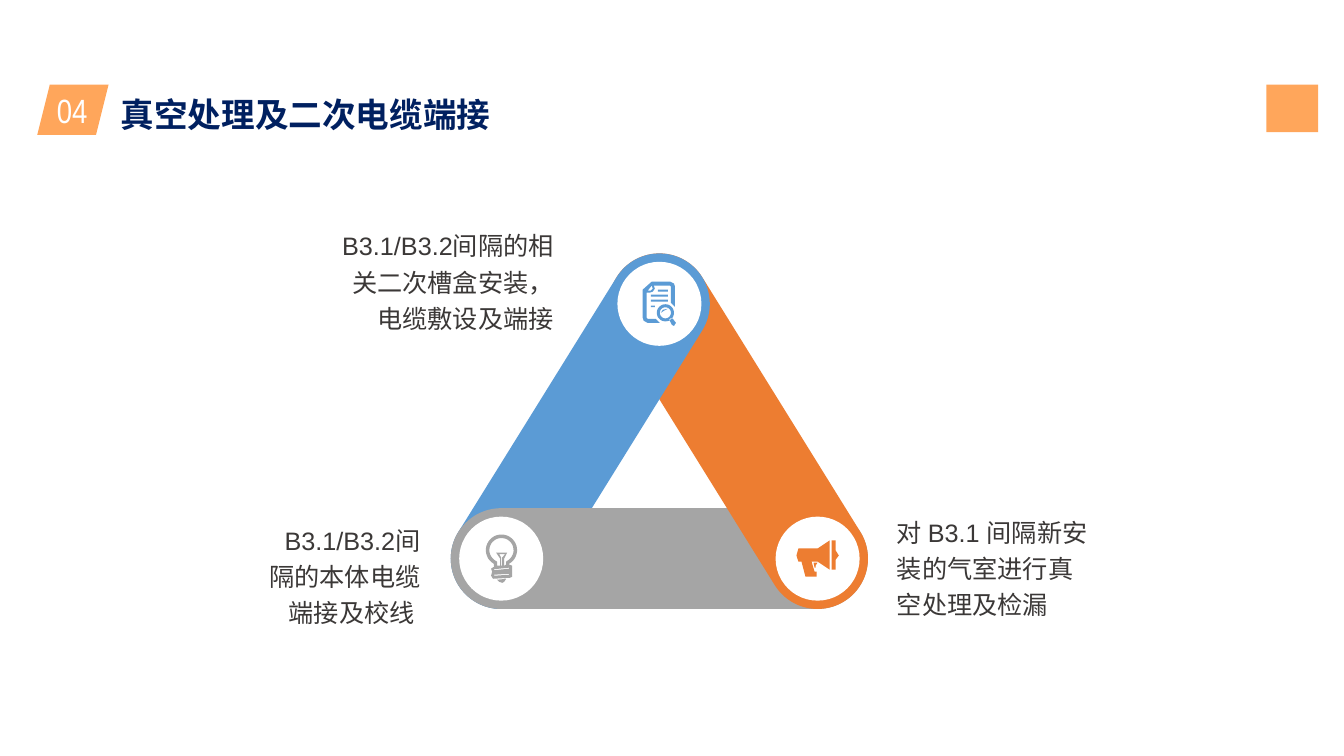
"""Build a slide with a header and a triangle of three linked work steps."""
import math

import pptx
import pptx.dml.color
import pptx.enum.shapes
import pptx.enum.text
import pptx.util
from lxml import etree

Pt = pptx.util.Pt
RGBColor = pptx.dml.color.RGBColor
Shape = pptx.enum.shapes.MSO_SHAPE
Align = pptx.enum.text.PP_ALIGN

PEACH = RGBColor(0xFF, 0xA6, 0x5B)
NAVY = RGBColor(0x00, 0x20, 0x60)
WHITE = RGBColor(0xFF, 0xFF, 0xFF)
BLUE = RGBColor(0x5B, 0x9B, 0xD5)
ORANGE = RGBColor(0xED, 0x7D, 0x31)
GREY = RGBColor(0xA5, 0xA5, 0xA5)
CHARCOAL = RGBColor(0x3B, 0x38, 0x37)

CHINESE = "Noto Sans CJK SC"
DRAWING = "{http://schemas.openxmlformats.org/drawingml/2006/main}"
ICON_UNIT = 0.72
ICON_STEPS = 10
BAR = 72
DISC = 60


def arc(x, y, radius, start=0, end=360):
    """Return points along a circular arc, with angles in degrees."""
    steps = 32
    angles = [math.radians(start + (end - start) * i / steps) for i in range(steps + 1)]
    return [(x + radius * math.cos(a), y + radius * math.sin(a)) for a in angles]


def stripe(x, y, width, height):
    """Return the corners of a rectangle."""
    return [(x, y), (x + width, y), (x + width, y + height), (x, y + height)]


DOCUMENT = (33, 44, [
    [(9, 0), (27, 0), (31, 2), (32, 5), (32, 25), (28, 21), (28, 5), (27, 4), (11, 4),
     (12, 7), (10, 10), (7, 11), (4, 11), (4, 36), (5, 37), (13, 37), (17, 41), (5, 41),
     (1, 39), (0, 36), (0, 8)],
    [(9, 4), (5, 9), (8, 9), (10, 7)],
    stripe(8, 24, 4, 1.5), stripe(8, 18, 17, 2), stripe(8, 13, 17, 2), stripe(15, 8, 10, 2),
    arc(22.5, 31, 8.5), arc(22.5, 31, 5.5),
    [(18, 31), (20, 28), (25, 27), (21, 29)],
    [(26, 38), (27, 39), (29, 43), (31, 44), (33, 41), (30, 37), (28, 36)],
])
BULB = (30, 48, [
    arc(15.3, 15.6, 15.5, 120, 420) + [
        (23, 30), (26, 31), (26, 42), (24, 43), (7, 44), (5, 41), (6, 37), (5, 34), (8, 32)],
    arc(15.3, 15.6, 12, 120, 420) + [
        (20, 27), (20, 30), (18, 31), (18, 24), (21, 18), (10, 18), (14, 24), (14, 31),
        (11, 31), (11, 27)],
    [(13, 19.5), (19, 19.5), (16, 23), (16, 31), (15, 31), (15, 23)],
    [(8, 40), (23, 39), (23, 40), (8, 41)],
    [(8, 34.5), (23, 33), (23, 34), (8, 35.5)],
    [(11, 45), (20, 44), (18, 47), (16, 48), (13, 47)],
])
MEGAPHONE = (42, 36, [
    [(2, 8), (21, 8), (33, 0), (33, 29), (21, 21), (15, 21), (18, 31), (20, 31), (20, 36),
     (9, 36), (5, 21), (2, 21), (0, 15)],
    [(35, 0), (39, 0), (39, 10), (42, 15), (39, 19), (39, 29), (35, 29)],
    [(21, 22), (17, 22), (18, 27), (19, 27), (19, 25)],
])


def paint(shape, colour):
    """Give a shape a plain fill without line or shadow."""
    shape.shadow.inherit = False
    shape.fill.solid()
    shape.fill.fore_color.rgb = colour
    shape.line.fill.background()


def add_block(page, kind, box, colour):
    """Add a preset shape in the given box."""
    block = page.shapes.add_shape(kind, *map(Pt, box))
    paint(block, colour)
    return block


def add_words(page, box, spans, size, colour, align=Align.LEFT, spacing=1, bold=None):
    """Add a wrapping text box from pairs of text and font."""
    frame = page.shapes.add_textbox(*map(Pt, box)).text_frame
    frame.word_wrap = True
    para = frame.paragraphs[0]
    para.alignment = align
    para.line_spacing = float(spacing)
    for text, font in spans:
        span = para.add_run()
        span.text = text
        span.font.name = font
        span.font.size = Pt(size)
        span.font.bold = bold
        span.font.color.rgb = colour
        properties = span._r.get_or_add_rPr()
        properties.set("lang", "zh-CN")
        etree.SubElement(properties, DRAWING + "ea").set("typeface", CHINESE)


def add_bar(page, start, end, colour):
    """Add a round-ended bar whose end caps centre on two points."""
    across, down = end[0] - start[0], end[1] - start[1]
    length = math.hypot(across, down) + BAR
    left = (start[0] + end[0] - length) / 2
    top = (start[1] + end[1] - BAR) / 2
    bar = add_block(page, Shape.ROUNDED_RECTANGLE, (left, top, length, BAR), colour)
    bar.adjustments[0] = 0.5
    bar.rotation = math.degrees(math.atan2(down, across))


def add_icon(page, centre, icon, colour):
    """Add a freeform icon centred on a point."""
    width, height, outlines = icon
    builder = None
    for outline in outlines:
        points = [(x * ICON_STEPS, y * ICON_STEPS) for x, y in outline]
        if builder is None:
            builder = page.shapes.build_freeform(*points[0], scale=Pt(ICON_UNIT) / ICON_STEPS)
        else:
            builder.move_to(*points[0])
        builder.add_line_segments(points[1:], close=True)
    left = centre[0] - width * ICON_UNIT / 2
    top = centre[1] - height * ICON_UNIT / 2
    paint(builder.convert_to_shape(Pt(left), Pt(top)), colour)


def add_header(page, box):
    """Add the section number, the title and the square at the right end."""
    left, top, width, height = box
    add_block(page, Shape.PARALLELOGRAM, (left, top, 51, height), PEACH)
    add_words(page, (left + 7, top, 44, height), [("04", "Arial Narrow")], 24, WHITE)
    add_words(page, (left + 52.6, top + 3, 384, height),
              [("真空处理及二次电缆端接", CHINESE)], 24, NAVY, bold=True)
    add_block(page, Shape.RECTANGLE, (left + width - 37, top, 37, 34), PEACH)


def add_triangle(page, box):
    """Add three linked bars with icon discs at the corners."""
    left, top, width, height = box
    inset = BAR / 2
    peak = (left + width / 2, top + inset)
    left_foot = (left + inset, top + height - inset)
    right_foot = (left + width - inset, top + height - inset)
    overlap = (left_foot[0] + 80.5, left_foot[1])
    for start, end, colour in ((left_foot, right_foot, GREY), (peak, right_foot, ORANGE),
                               (left_foot, peak, BLUE), (left_foot, overlap, GREY)):
        add_bar(page, start, end, colour)
    for centre, icon, colour in ((peak, DOCUMENT, BLUE), (left_foot, BULB, GREY),
                                 (right_foot, MEGAPHONE, ORANGE)):
        disc = (centre[0] - DISC / 2, centre[1] - DISC / 2, DISC, DISC)
        add_block(page, Shape.OVAL, disc, WHITE)
        add_icon(page, centre, icon, colour)


def add_labels(page, box):
    """Add the three step descriptions around the triangle."""
    left, top = box[:2]
    labels = (
        (311.6, 180.5, 154.8, Align.LEFT,
         [("对 ", CHINESE), ("B3.1 ", "Arial"), ("间隔新安装的气室进行真空处理及检漏", CHINESE)]),
        (-85.8, -24, 166.3, Align.RIGHT,
         [("B3.1/B3.2", "Arial"), ("间隔的相关二次槽盒安装， 电缆敷设及端接", CHINESE)]),
        (-137, 186.2, 122.4, Align.RIGHT,
         [("B3.1/B3.2", "Arial"), ("间隔的本体电缆端接及校线 ", CHINESE)]),
    )
    for across, down, width, align, spans in labels:
        add_words(page, (left + across, top + down, width, 83.5), spans, 18, CHARCOAL,
                  align, spacing=1.2)


def main():
    """Build and save the deck."""
    deck = pptx.Presentation()
    deck.slide_width, deck.slide_height = Pt(960), Pt(540)
    page = deck.slides.add_slide(deck.slide_layouts[6])
    triangle_box = (322, 181, 298, 254)
    add_header(page, (26.6, 60.4, 915, 36))
    add_triangle(page, triangle_box)
    add_labels(page, triangle_box)
    deck.save("out.pptx")


if __name__ == "__main__":
    main()
